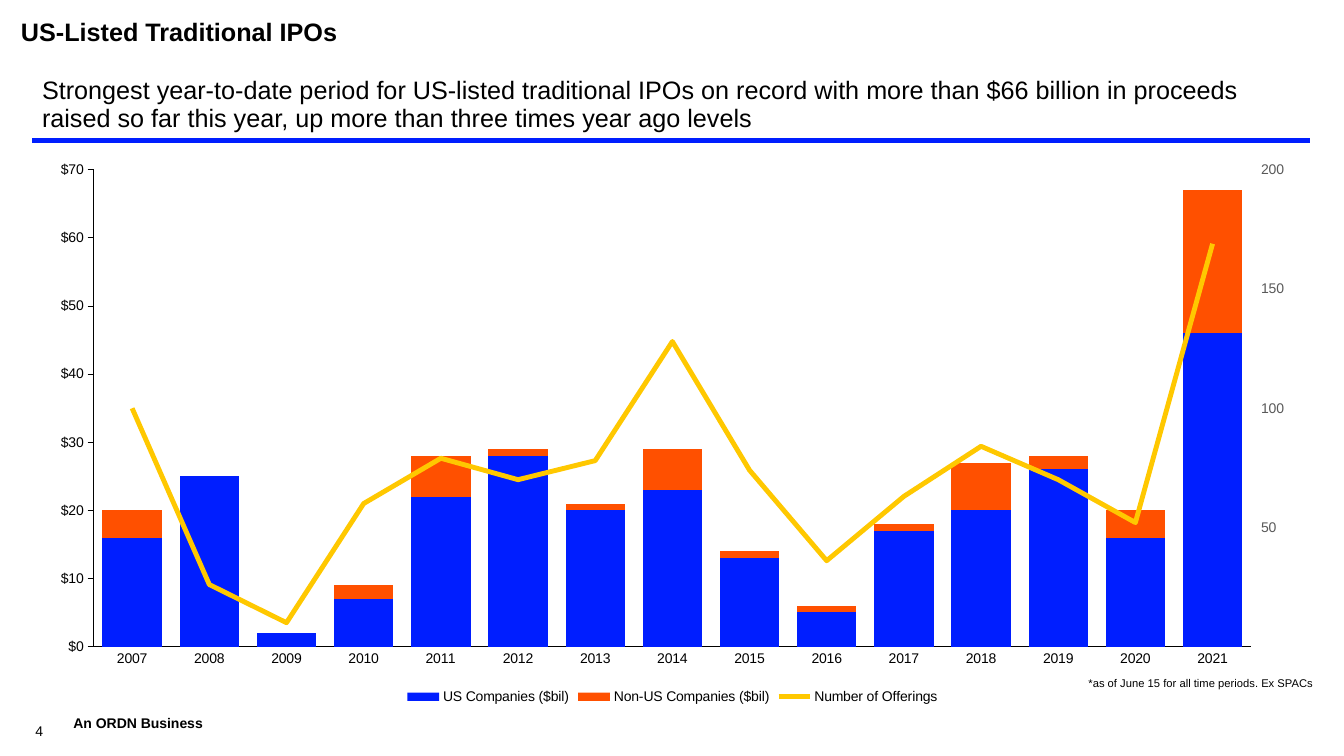
from copy import deepcopy
from lxml import etree
from pptx import Presentation
from pptx import util as u
from pptx.chart import axis as ax, data as cd
from pptx.dml.color import RGBColor
from pptx.enum import chart as ch, shapes, text
from pptx.oxml.ns import qn

BLACK = RGBColor(0, 0, 0)
GREY = RGBColor(0x59, 0x59, 0x59)
BLUE = RGBColor(0x00, 0x1E, 0xFF)
ORANGE = RGBColor(0xFF, 0x50, 0x00)
YELLOW = RGBColor(0xFF, 0xC8, 0x00)

prs = Presentation()
prs.slide_width, prs.slide_height = u.Cm(33.87), u.Cm(19.05)
s = prs.slides.add_slide(prs.slide_layouts[6])


def add_text(content, left, top, width, height, size=10, bold=False, wrap=True,
             anchor=text.MSO_ANCHOR.MIDDLE, spacing=None, inset=None):
    sp = s.shapes.add_textbox(u.Cm(left), u.Cm(top), u.Cm(width), u.Cm(height))
    tf = sp.text_frame
    tf.word_wrap = wrap
    tf.vertical_anchor = anchor
    if inset is not None:
        tf.margin_left = tf.margin_right = tf.margin_top = tf.margin_bottom = u.Cm(inset)
    p = tf.paragraphs[0]
    if spacing:
        p.line_spacing = spacing
    r = p.add_run()
    r.text = content
    r.font.size, r.font.bold, r.font.name = u.Pt(size), bold, "Arial"
    r.font.color.rgb = BLACK
    return tf


add_text("4", 0.89, 17.93, 1.52, 0.69, wrap=False, anchor=text.MSO_ANCHOR.BOTTOM, inset=0)

data = cd.CategoryChartData()
data.categories = [str(year) for year in range(2007, 2022)]
data.add_series("US Companies ($bil)", [16, 25, 2, 7, 22, 28, 20, 23, 13, 5, 17, 20, 26, 16, 46])
data.add_series("Non-US Companies ($bil)", [4, 0, 0, 2, 6, 1, 1, 6, 1, 1, 1, 7, 2, 4, 21])
data.add_series("Number of Offerings", [100, 26, 10, 60, 79, 70, 78, 128, 74, 36, 63, 84, 70, 52, 169])
chart = s.shapes.add_chart(ch.XL_CHART_TYPE.COLUMN_STACKED, u.Cm(1.02), u.Cm(3.76),
                           u.Cm(31.85), u.Cm(14.1), data).chart
chart.font.size, chart.font.name = u.Pt(10), "Calibri"
chart.font.color.rgb = BLACK
chart.has_title = False
chart.has_legend = True
chart.legend.position = ch.XL_LEGEND_POSITION.BOTTOM
chart.legend.include_in_layout = False

cat_axis, val_axis = chart.category_axis, chart.value_axis
for part in (cat_axis.tick_labels, val_axis.tick_labels, chart.legend):
    part.font.size, part.font.name = u.Pt(10), "Arial"
    part.font.color.rgb = BLACK
for axis in (cat_axis, val_axis):
    axis.has_major_gridlines = False
    axis.format.line.color.rgb = BLACK
    axis.format.line.width = u.Pt(0.75)
cat_axis.major_tick_mark = ch.XL_TICK_MARK.NONE
val_axis.major_tick_mark = ch.XL_TICK_MARK.OUTSIDE
val_axis.minimum_scale, val_axis.maximum_scale, val_axis.major_unit = 0, 70, 10
val_axis.tick_labels.number_format = '"$"#,##0'
val_axis.tick_labels.number_format_is_linked = False

bars = chart.plots[0]
bars.gap_width, bars.overlap = 30, 100
bars.vary_by_categories = False
for series, color in zip(bars.series, (BLUE, ORANGE)):
    series.format.fill.solid()
    series.format.fill.fore_color.rgb = color

plot_area = chart.element.find(".//" + qn("c:plotArea"))
bar_chart = plot_area.find(qn("c:barChart"))
offerings = bar_chart.findall(qn("c:ser"))[2]
for invert in offerings.findall(qn("c:invertIfNegative")):
    offerings.remove(invert)
line_chart = etree.SubElement(plot_area, qn("c:lineChart"))
for tag, val in (("grouping", "standard"), ("varyColors", "0"), ("marker", "1"),
                 ("axId", "5001"), ("axId", "5002")):
    etree.SubElement(line_chart, qn("c:" + tag)).set("val", val)
line_chart.insert(2, offerings)
bar_chart.addnext(line_chart)

left_val = plot_area.find(qn("c:valAx"))
right_val = deepcopy(left_val)
hidden_cat = deepcopy(plot_area.find(qn("c:catAx")))
left_val.addnext(right_val)
right_val.addnext(hidden_cat)
for element, own_id, cross_id in ((right_val, "5002", "5001"), (hidden_cat, "5001", "5002")):
    element.find(qn("c:axId")).set("val", own_id)
    element.find(qn("c:crossAx")).set("val", cross_id)
right_val.find(qn("c:axPos")).set("val", "r")
right_val.find(qn("c:crosses")).set("val", "max")

ax.CategoryAxis(hidden_cat).visible = False
right_axis = ax.ValueAxis(right_val)
right_axis.maximum_scale, right_axis.major_unit = 200, 50
right_axis.format.line.fill.background()
right_axis.tick_labels.number_format = "#,##0;;"
right_axis.tick_labels.font.color.rgb = GREY

for old in plot_area.findall(qn("c:layout")):
    plot_area.remove(old)
layout = etree.SubElement(plot_area, qn("c:layout"))
manual = etree.SubElement(layout, qn("c:manualLayout"))
for tag, val in (("layoutTarget", "inner"), ("xMode", "edge"), ("yMode", "edge"),
                 ("x", "0.042"), ("y", "0.037"), ("w", "0.916"), ("h", "0.852")):
    etree.SubElement(manual, qn("c:" + tag)).set("val", val)
plot_area.insert(0, layout)

line = chart.plots[1].series[0]
line.smooth = False
line.marker.style = ch.XL_MARKER_STYLE.NONE
line.format.line.color.rgb = YELLOW
line.format.line.width = u.Pt(3.5)

add_text("US-Listed Traditional IPOs", 0.28, 0.38, 16.94, 0.81, size=18, bold=True)
add_text("Strongest year-to-date period for US-listed traditional IPOs on record with more than "
         "$66 billion in proceeds raised so far this year, up more than three times year ago levels",
         0.81, 1.83, 32.21, 1.65, size=18, spacing=0.9)

rule = s.shapes.add_connector(shapes.MSO_CONNECTOR.STRAIGHT, u.Cm(0.81), u.Cm(3.54),
                              u.Cm(33.02), u.Cm(3.54))
rule.line.color.rgb = BLUE
rule.line.width = u.Pt(3)
etree.SubElement(rule._element.spPr, qn("a:effectLst"))

add_text("An ORDN Business", 1.6, 17.88, 6.05, 0.69, bold=True)
tf = add_text("*as of June 15 for all time periods. Ex SPACs", 27.18, 16.92, 7.29, 0.61,
              size=8, anchor=text.MSO_ANCHOR.TOP)
tf.auto_size = text.MSO_AUTO_SIZE.SHAPE_TO_FIT_TEXT

prs.save("out.pptx")
